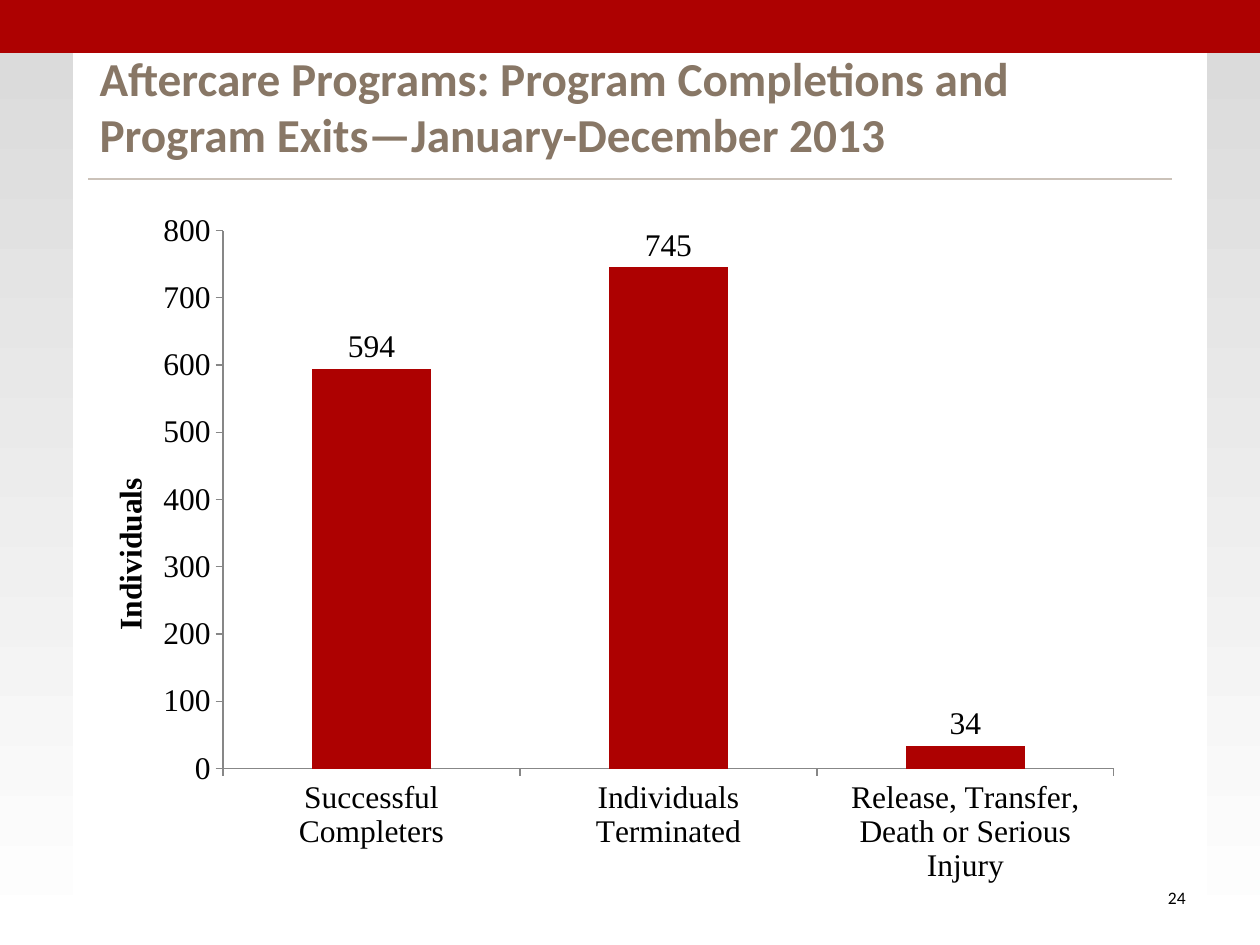
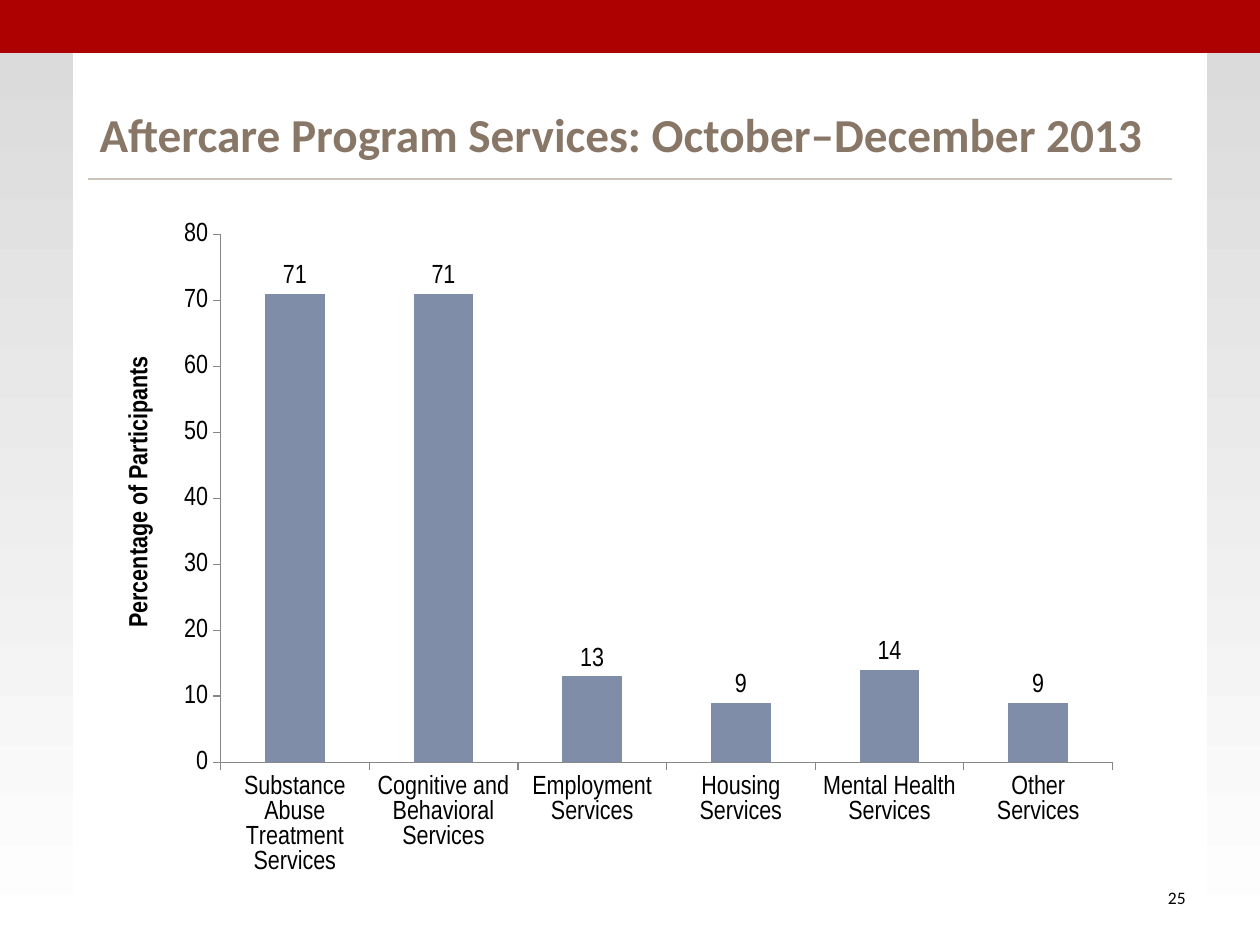
from lxml import etree
from pptx import Presentation
from pptx.chart.data import CategoryChartData
from pptx.dml.color import RGBColor
from pptx.enum.chart import XL_CHART_TYPE, XL_LABEL_POSITION, XL_TICK_MARK
from pptx.enum.shapes import MSO_CONNECTOR, MSO_SHAPE
from pptx.enum.text import MSO_ANCHOR, PP_ALIGN
from pptx.oxml import parse_xml
from pptx.oxml.ns import nsdecls, qn
from pptx.util import Inches, Pt

RED = RGBColor(0xAD, 0x01, 0x01)
SLATE = RGBColor(0x80, 0x8D, 0xA9)
TAUPE = RGBColor(0x88, 0x77, 0x66)
RULE = RGBColor(0xCB, 0xC2, 0xB9)
AXIS_GREY = RGBColor(0x87, 0x87, 0x87)
SIDE_GREY = RGBColor(0xD9, 0xD9, 0xD9)
WHITE = RGBColor(0xFF, 0xFF, 0xFF)
BLACK = RGBColor(0, 0, 0)

COLUMNS = XL_CHART_TYPE.COLUMN_CLUSTERED
ABOVE_BAR = XL_LABEL_POSITION.OUTSIDE_END
TICK_OUT, TICK_NONE = XL_TICK_MARK.OUTSIDE, XL_TICK_MARK.NONE
RECTANGLE, STRAIGHT = MSO_SHAPE.RECTANGLE, MSO_CONNECTOR.STRAIGHT
BOTTOM, MIDDLE = MSO_ANCHOR.BOTTOM, MSO_ANCHOR.MIDDLE
LEFT, RIGHT = PP_ALIGN.LEFT, PP_ALIGN.RIGHT
BLANK_LAYOUT = 6


def set_layout(parent, position, **fractions):
    """Give a chart part a manual layout, as fractions of the chart's area."""
    for old in parent.findall(qn("c:layout")):
        parent.remove(old)
    layout = parse_xml(f"<c:layout {nsdecls('c')}><c:manualLayout/></c:layout>")
    manual = layout[0]
    if "w" in fractions:
        etree.SubElement(manual, qn("c:layoutTarget")).set("val", "inner")
    for side in "xy":
        etree.SubElement(manual, qn(f"c:{side}Mode")).set("val", "edge")
    for name, value in fractions.items():
        etree.SubElement(manual, qn(f"c:{name}")).set("val", f"{value:.4f}")
    parent.insert(position, layout)


class ReportDeck:
    """Holds the report's style and the page being built."""

    text_font = "Calibri"

    def __init__(self):
        self.deck = Presentation()
        self.deck.slide_width, self.deck.slide_height = Inches(10), Inches(7.5)
        self.page = None

    def start_page(self, title, number):
        layout = self.deck.slide_layouts[BLANK_LAYOUT]
        self.page = self.deck.slides.add_slide(layout)
        fill = self.page.background.fill
        fill.gradient()
        fill.gradient_angle = 270
        for stop, color in zip(fill.gradient_stops, (SIDE_GREY, WHITE)):
            stop.color.rgb = color
        self.add_band(0.58, 0.42, 9, 7.08, WHITE)
        self.add_band(0, 0, 10, 0.42, RED)
        self.add_rule(0.7, 9.3, 1.42)
        self.add_text((0.7, 0.5, 8.6, 0.83), title, 27, TAUPE, LEFT, BOTTOM, True)
        self.add_text((8.67, 6.92, 0.83, 0.4), str(number), 10, BLACK, RIGHT, MIDDLE)

    def add_band(self, left, top, width, height, color):
        band = self.page.shapes.add_shape(
            RECTANGLE, Inches(left), Inches(top), Inches(width), Inches(height))
        band.shadow.inherit = False
        band.fill.solid()
        band.fill.fore_color.rgb = color
        band.line.fill.background()

    def add_rule(self, left, right, top):
        rule = self.page.shapes.add_connector(
            STRAIGHT, Inches(left), Inches(top), Inches(right), Inches(top))
        rule.line.color.rgb = RULE
        rule.line.width = Pt(1.25)
        etree.SubElement(rule._element.spPr, qn("a:effectLst"))

    def add_text(self, place, text, size, color, align, anchor, bold=False):
        box = self.page.shapes.add_textbox(*map(Inches, place))
        frame = box.text_frame
        frame.word_wrap = True
        frame.vertical_anchor = anchor
        frame.margin_left = frame.margin_right = Inches(0.09)
        frame.margin_top = frame.margin_bottom = Inches(0.04)
        para = frame.paragraphs[0]
        para.alignment = align
        span = para.add_run()
        span.text = text
        self.style_font(span.font, self.text_font, size, color, bold)

    @staticmethod
    def style_font(font, name, size, color, bold=False):
        font.name, font.size, font.bold = name, Pt(size), bold
        font.color.rgb = color

    def add_column_chart(self, place, plot_place, title_at, values, color,
                         font, size, axis_title, axis_max, axis_step, number_format):
        """Draw one series; plot_place and title_at are inches on the page."""
        data = CategoryChartData()
        data.categories = list(values)
        data.add_series("Series 1", list(values.values()))
        chart = self.page.shapes.add_chart(COLUMNS, *map(Inches, place), data).chart
        chart.has_legend = False
        chart.has_title = False
        self.style_font(chart.font, font, size, BLACK)

        plot = chart.plots[0]
        plot.gap_width = 150
        plot.vary_by_categories = False
        fill = plot.series[0].format.fill
        fill.solid()
        fill.fore_color.rgb = color
        plot.has_data_labels = True
        labels = plot.data_labels
        labels.show_value = True
        labels.position = ABOVE_BAR
        labels.number_format = number_format
        labels.number_format_is_linked = False

        value_axis = chart.value_axis
        for axis in (chart.category_axis, value_axis):
            axis.has_major_gridlines = False
            axis.major_tick_mark = TICK_OUT
            axis.minor_tick_mark = TICK_NONE
            axis.format.line.color.rgb = AXIS_GREY
        value_axis.minimum_scale, value_axis.maximum_scale = 0, axis_max
        value_axis.major_unit = axis_step
        value_axis.tick_labels.number_format = number_format
        value_axis.tick_labels.number_format_is_linked = False

        title = value_axis.axis_title
        span = title.text_frame.paragraphs[0].add_run()
        span.text = axis_title
        self.style_font(span.font, font, size, BLACK, True)
        body = title.text_frame._txBody.bodyPr
        body.set("rot", "-5400000")
        body.set("vert", "horz")

        left, top, width, height = place
        x, y, w, h = plot_place
        title_x, title_y = title_at
        set_layout(chart._chartSpace.chart.plotArea, 0, x=(x - left) / width,
                   y=(y - top) / height, w=w / width, h=h / height)
        set_layout(title._element, 1, x=(title_x - left) / width,
                   y=(title_y - top) / height)


def main():
    report = ReportDeck()

    report.start_page("Aftercare Programs: Program Completions and "
                      "Program Exits—January-December 2013", 24)
    exits = {
        "Successful Completers": 594,
        "Individuals Terminated": 745,
        "Release, Transfer, Death or Serious Injury": 34,
    }
    report.add_column_chart(
        (0.7, 1.55, 8.4, 5.5), (1.77, 1.83, 7.07, 4.27), (0.83, 3.75), exits, RED,
        "Times New Roman", 18, "Individuals", 800, 100, "###0")

    report.start_page("Aftercare Program Services: October–December 2013", 25)
    services = {
        "Substance Abuse Treatment Services": 71,
        "Cognitive and Behavioral Services": 71,
        "Employment Services": 13,
        "Housing Services": 9,
        "Mental Health Services": 14,
        "Other Services": 9,
    }
    report.add_column_chart(
        (0.8, 1.65, 8.2, 5.4), (1.75, 1.86, 7.08, 4.19), (0.95, 2.79), services, SLATE,
        "Arial Narrow", 15, "Percentage of Participants", 80, 10, "0")

    report.deck.save("out.pptx")


if __name__ == "__main__":
    main()
